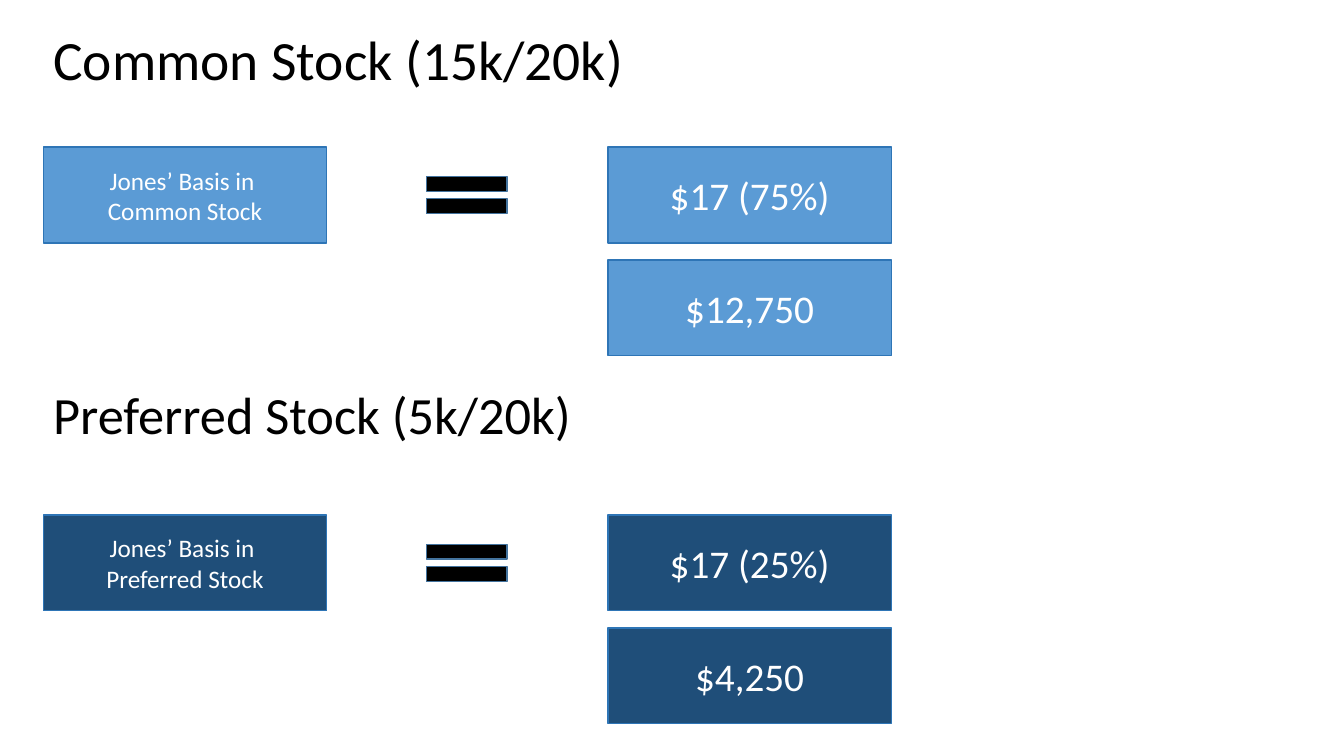
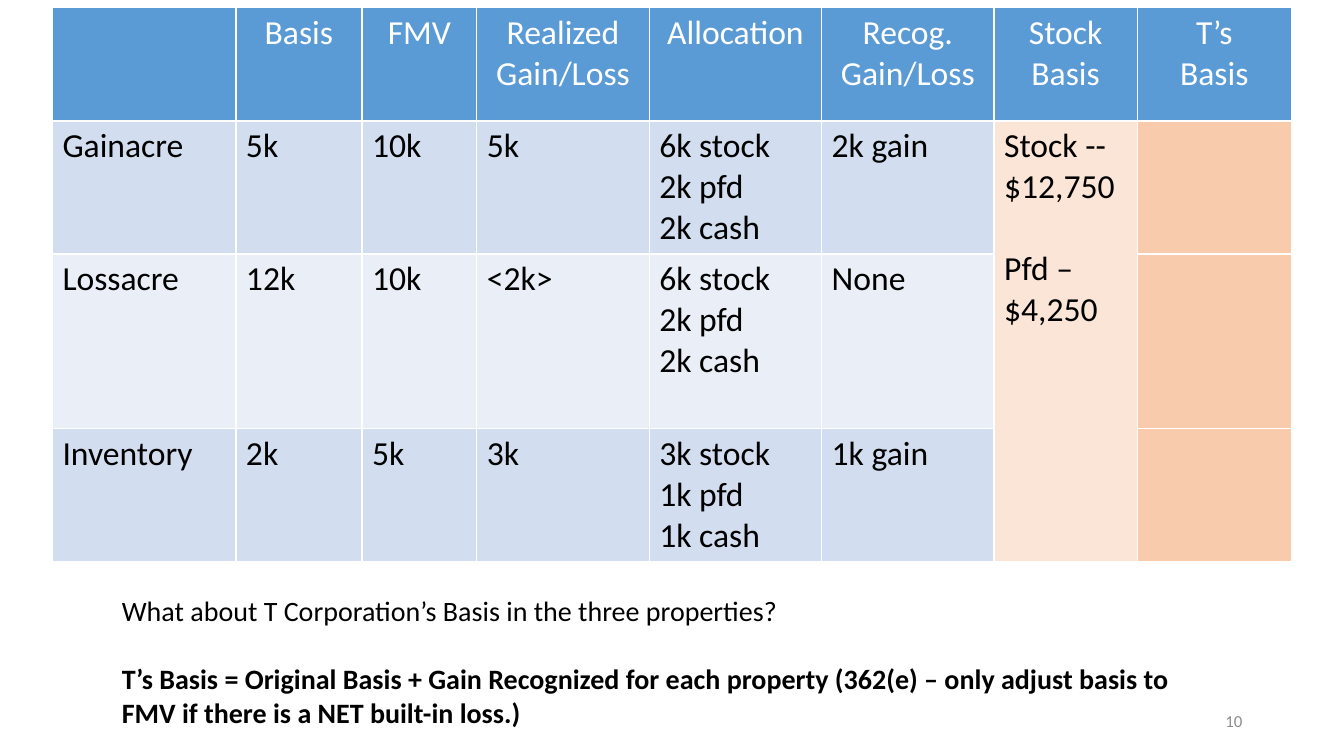
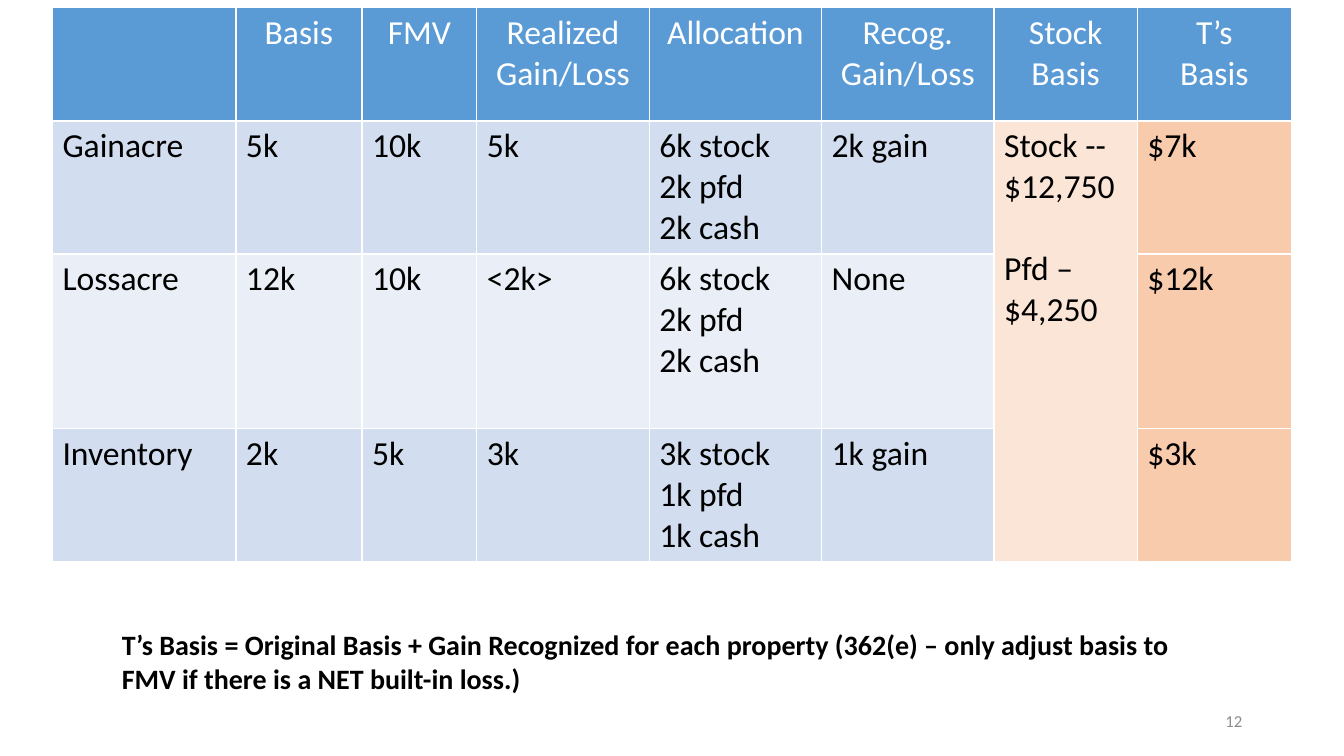
from lxml.etree import SubElement
from pptx import Presentation
from pptx.dml.color import RGBColor
from pptx.enum.shapes import MSO_SHAPE as Preset
from pptx.enum.text import MSO_ANCHOR as Anchor, PP_ALIGN as Align
from pptx.oxml.ns import qn
from pptx.util import Inches, Pt

FONT = "Calibri"
BLACK, WHITE, GREY = "000000", "FFFFFF", "8C8C8C"
BLUE, NAVY, BOX_LINE, EQUAL_LINE = "5B9BD5", "1F4E79", "2E75B6", "43739E"
BAND_DARK, BAND_LIGHT, PEACH, ORANGE = "D2DEEF", "EAEFF7", "FBE5D6", "F8CBAD"


def paint(target, color):
    target.solid()
    target.fore_color.rgb = RGBColor.from_string(color)


def write(frame, lines, size, color, align=Align.LEFT, bold=False, spacing=None, gap_before=None):
    frame.word_wrap = True
    for index, line in enumerate(lines):
        paragraph = frame.add_paragraph() if index else frame.paragraphs[0]
        paragraph.alignment = align
        if spacing:
            paragraph.line_spacing = spacing
        if index == gap_before:
            paragraph.space_before = Pt(size * 1.22)
        run = paragraph.add_run()
        run.text = line
        run.font.name = FONT
        run.font.size = Pt(size)
        run.font.bold = bold and index == len(lines) - 1
        paint(run.font.fill, color)


presentation = Presentation()
presentation.slide_width = Inches(13.33)
presentation.slide_height = Inches(7.5)
blank = presentation.slide_layouts[6]

slide = presentation.slides.add_slide(blank)
LEFT, COLUMN, ROW = 0.43, 2.8, 1.12
BOX_WIDTH, BOX_HEIGHT = 2.81, 0.95
EQUAL_WIDTH, EQUAL_HEIGHT = 1.09, 0.63
stocks = [
    ("Common Stock", " (15k/20k)", 0.17, 6.17, 39.6, 0.9, 1.46, BLUE, "$17 (75%)", "$12,750"),
    ("Preferred Stock", " (5k/20k)", 3.72, 5.46, 37.4, 0.8, 5.11, NAVY, "$17 (25%)", "$4,250"),
]
for stock, ratio, title_top, title_width, title_size, spacing, top, color, share, amount in stocks:
    title = slide.shapes.add_textbox(Inches(LEFT), Inches(title_top), Inches(title_width), Inches(0.89))
    title.text_frame.vertical_anchor = Anchor.MIDDLE
    write(title.text_frame, [stock + ratio], title_size, BLACK, spacing=spacing)

    boxes = [
        (0, 0, ["Jones’ Basis in ", stock], 18),
        (2, 0, [share], 28),
        (2, 1, [amount], 28),
    ]
    for column, row, lines, size in boxes:
        box = slide.shapes.add_shape(
            Preset.RECTANGLE, Inches(LEFT + column * COLUMN), Inches(top + row * ROW),
            Inches(BOX_WIDTH), Inches(BOX_HEIGHT))
        box.shadow.inherit = False
        paint(box.fill, color)
        paint(box.line.fill, BOX_LINE)
        box.line.width = Pt(1)
        box.text_frame.vertical_anchor = Anchor.MIDDLE
        write(box.text_frame, lines, size, WHITE, Align.CENTER)

    equal = slide.shapes.add_shape(
        Preset.MATH_EQUAL, Inches(LEFT + 1.5 * COLUMN - EQUAL_WIDTH / 2),
        Inches(top + (BOX_HEIGHT - EQUAL_HEIGHT) / 2), Inches(EQUAL_WIDTH), Inches(EQUAL_HEIGHT))
    equal.shadow.inherit = False
    paint(equal.fill, BLACK)
    paint(equal.line.fill, EQUAL_LINE)
    equal.line.width = Pt(1)

widths = [1.82, 1.25, 1.14, 1.71, 1.71, 1.71, 1.42, 1.53]
heights = [1.13, 1.32, 1.73, 1.32]
STOCK_COLUMN, T_COLUMN = 6, 7
rows = [
    ["", "Basis", "FMV", "Realized\nGain/Loss", "Allocation", "Recog.\nGain/Loss", "Stock\nBasis", "T’s\nBasis"],
    ["Gainacre", "5k", "10k", "5k", "6k stock\n2k pfd\n2k cash", "2k gain", "Stock -- $12,750\nPfd –\n$4,250"],
    ["Lossacre", "12k", "10k", "<2k>", "6k stock\n2k pfd\n2k cash", "None", ""],
    ["Inventory", "2k", "5k", "3k", "3k stock\n1k pfd\n1k cash", "1k gain", ""],
]
question = "What about T Corporation’s Basis in the three properties?"
rule = ("T’s Basis = Original Basis + Gain Recognized for each property "
        "(362(e) – only adjust basis to FMV if there is a NET built-in loss.)")
basis_slides = [
    ("10", ["", "", ""], [question, rule], 5.84, 1.45),
    ("12", ["$7k", "$12k", "$3k"], [rule], 6.18, 0.77),
]
for number, t_basis, notes, notes_top, notes_height in basis_slides:
    slide = presentation.slides.add_slide(blank)
    table = slide.shapes.add_table(
        len(heights), len(widths), Inches(0.52), Inches(0.07),
        Inches(sum(widths)), Inches(sum(heights))).table
    for column, width in zip(table.columns, widths):
        column.width = Inches(width)
    for row, height in zip(table.rows, heights):
        row.height = Inches(height)
    table.cell(1, STOCK_COLUMN).merge(table.cell(3, STOCK_COLUMN))

    filled_rows = [rows[0]] + [row + [basis] for row, basis in zip(rows[1:], t_basis)]
    for row_index, row in enumerate(filled_rows):
        for column_index, text in enumerate(row):
            cell = table.cell(row_index, column_index)
            properties = cell._tc.get_or_add_tcPr()
            for side in ("a:lnL", "a:lnR", "a:lnT", "a:lnB"):
                border = SubElement(properties, qn(side), w=str(Pt(1)))
                SubElement(SubElement(border, qn("a:solidFill")), qn("a:srgbClr"), val=WHITE)
            header = row_index == 0
            band = BAND_DARK if row_index % 2 else BAND_LIGHT
            body = {STOCK_COLUMN: PEACH, T_COLUMN: ORANGE}.get(column_index, band)
            paint(cell.fill, BLUE if header else body)
            if text:
                write(cell.text_frame, text.split("\n"), 24, WHITE if header else BLACK,
                      Align.CENTER if header else Align.LEFT,
                      gap_before=1 if column_index == STOCK_COLUMN and not header else None)

    footer = slide.shapes.add_textbox(Inches(9.42), Inches(6.95), Inches(3), Inches(0.4))
    footer.text_frame.vertical_anchor = Anchor.MIDDLE
    write(footer.text_frame, [number], 12, GREY, Align.RIGHT)

    note_box = slide.shapes.add_textbox(Inches(1.11), Inches(notes_top), Inches(11.09), Inches(notes_height))
    write(note_box.text_frame, notes, 20, BLACK, bold=True, gap_before=1)

presentation.save("out.pptx")
